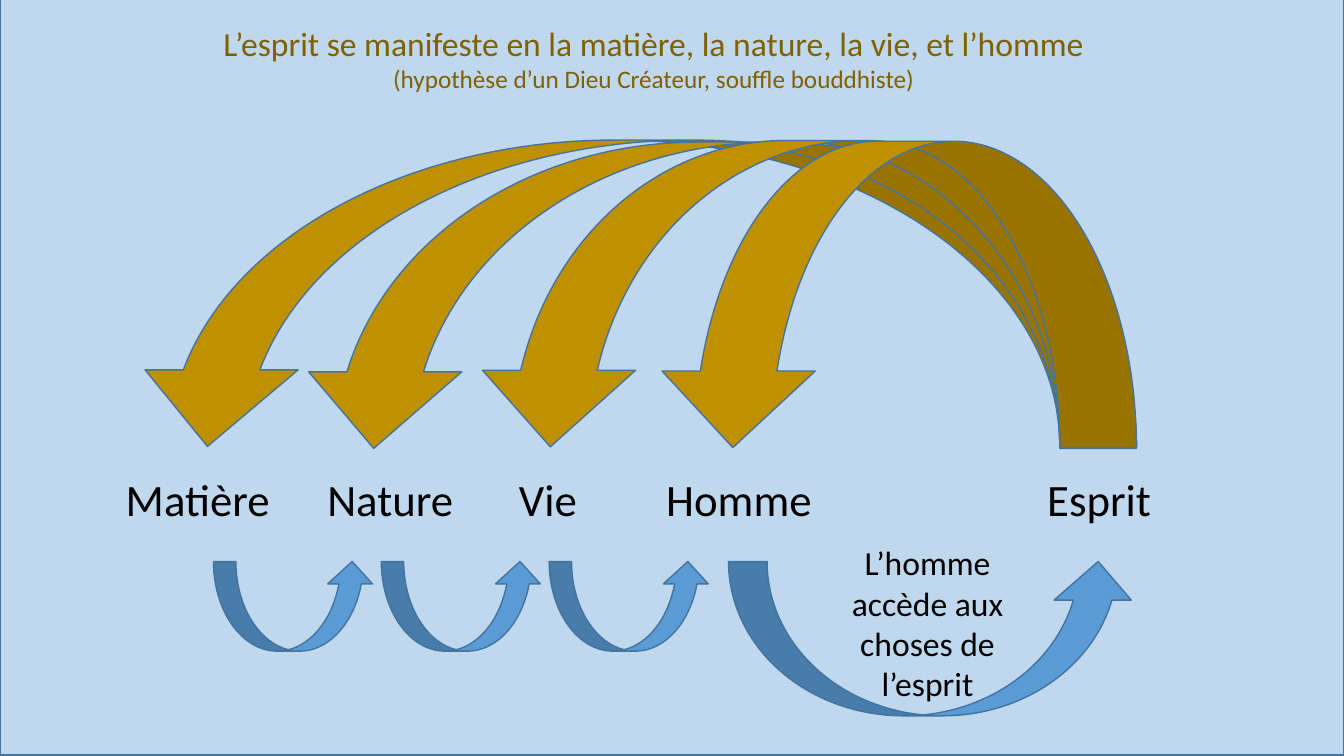
import pptx
import pptx.dml.color
import pptx.enum.shapes
import pptx.enum.text
import pptx.oxml.ns
import pptx.util
from lxml import etree
from pptx.util import Cm

COLOURS = {
    "blue": "5B9BD5",
    "outline": "43739E",
    "gold": "BF9000",
    "brown": "806000",
    "black": "000000",
}
SHAPE = pptx.enum.shapes.MSO_SHAPE
ALIGN = pptx.enum.text.PP_ALIGN
SLIDE_WIDTH, SLIDE_HEIGHT = 33.87, 19.05

# name, left, width
LABELS = [
    ("Esprit", 26.14, 3.91),
    ("Homme", 16.54, 5.51),
    ("Matière", 2.92, 4.19),
    ("Nature", 8.0, 4.19),
    ("Vie", 12.83, 2.13),
]
# left, top
GOLD_ARROWS = [(3.3, 3.53), (7.49, 3.58), (11.94, 3.54), (16.54, 3.56)]
GOLD_RIGHT = 28.64
STEP_LEFT, STEP_PITCH = 5.38, 4.23
BLUE_TOP = 14.15


def colour(name):
    return pptx.dml.color.RGBColor.from_string(COLOURS[name])


def add_filled_shape(slide, kind, box, fill):
    shape = slide.shapes.add_shape(kind, *map(Cm, box))
    shape.shadow.inherit = False
    shape.fill.solid()
    shape.fill.fore_color.rgb = colour(fill)
    shape.line.color.rgb = colour("outline")
    shape.line.width = pptx.util.Pt(1)
    return shape


def add_background(slide):
    """Add the translucent blue panel behind everything else."""
    panel = add_filled_shape(
        slide, SHAPE.RECTANGLE, (0, -0.02, SLIDE_WIDTH, SLIDE_HEIGHT), "blue")
    fill_colour = panel.element.spPr.find(
        "/".join(map(pptx.oxml.ns.qn, ("a:solidFill", "a:srgbClr"))))
    etree.SubElement(fill_colour, pptx.oxml.ns.qn("a:alpha"), val="39000")
    panel.element.getparent().insert(2, panel.element)


def add_curved_arrow(slide, box, fill, flip):
    arrow = add_filled_shape(slide, SHAPE.CURVED_DOWN_ARROW, box, fill)
    arrow.element.spPr.find(pptx.oxml.ns.qn("a:xfrm")).set(flip, "1")


def write_lines(shape, lines, colour_name, alignment):
    """Fill a shape with (text, size) lines, one paragraph each."""
    frame = shape.text_frame
    frame_format = {
        "word_wrap": True,
        "auto_size": pptx.enum.text.MSO_AUTO_SIZE.SHAPE_TO_FIT_TEXT,
        "vertical_anchor": pptx.enum.text.MSO_ANCHOR.TOP,
    }
    for attribute, value in frame_format.items():
        setattr(frame, attribute, value)
    for index, (text, size) in enumerate(lines):
        paragraph = frame.add_paragraph() if index else frame.paragraphs[0]
        paragraph.alignment = alignment
        paragraph.line_spacing = 1.0
        paragraph.space_before = pptx.util.Pt(0)
        run = paragraph.add_run()
        run.text = text
        font_format = {"name": "Calibri", "size": pptx.util.Pt(size)}
        for attribute, value in font_format.items():
            setattr(run.font, attribute, value)
        run.font.color.rgb = colour(colour_name)


def add_text(slide, box, text, size, alignment=ALIGN.LEFT):
    text_box = slide.shapes.add_textbox(*map(Cm, box))
    write_lines(text_box, [(text, size)], "black", alignment)


def format_title(slide):
    title = slide.shapes.title
    position = {"left": -0.46, "top": 0.46, "width": SLIDE_WIDTH, "height": 2.06}
    for attribute, value in position.items():
        setattr(title, attribute, Cm(value))
    lines = [
        ("L’esprit se manifeste en la matière, la nature, la vie, et l’homme", 24),
        ("(hypothèse d’un Dieu Créateur, souffle bouddhiste)", 18),
    ]
    write_lines(title, lines, "brown", ALIGN.CENTER)


def main():
    presentation = pptx.Presentation()
    presentation.slide_width = Cm(SLIDE_WIDTH)
    presentation.slide_height = Cm(SLIDE_HEIGHT)
    slide = presentation.slides.add_slide(presentation.slide_layouts[5])

    add_background(slide)
    format_title(slide)
    for name, left, width in LABELS:
        add_text(slide, (left, 11.76, width, 1.63), name, 32)
    for index in range(3):
        left = STEP_LEFT + index * STEP_PITCH
        add_curved_arrow(slide, (left, BLUE_TOP, 4.06, 2.26), "blue", "flipV")
    add_curved_arrow(slide, (18.36, BLUE_TOP, 10.29, 3.89), "blue", "flipV")
    add_text(slide, (20.62, 13.54, 5.51, 4.37),
             "L’homme accède aux choses de l’esprit", 24, ALIGN.CENTER)
    for left, top in GOLD_ARROWS:
        add_curved_arrow(
            slide, (left, top, GOLD_RIGHT - left, 7.72), "gold", "flipH")

    presentation.save("out.pptx")


if __name__ == "__main__":
    main()
